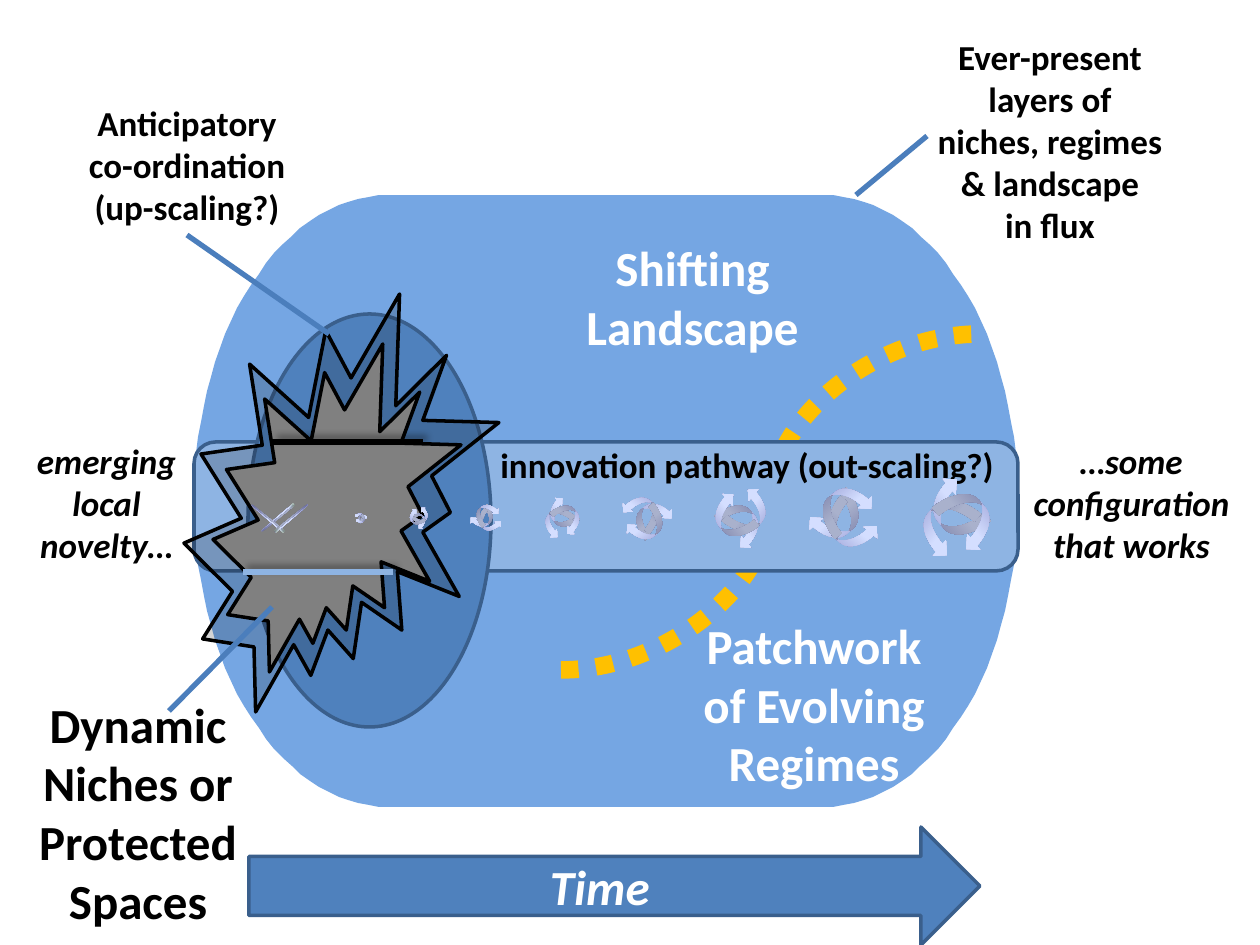
from dataclasses import dataclass
from math import cos, pi, radians, sin

from lxml import etree
from pptx import Presentation
from pptx import util as u
from pptx.dml.color import RGBColor
from pptx.enum import dml, shapes, text
from pptx.oxml import ns

PX = 914400 / 126
KIND = shapes.MSO_SHAPE
LINK = shapes.MSO_CONNECTOR


@dataclass(frozen=True)
class Theme:
    font: str = "Calibri"
    big: int = 28
    small: int = 20
    black: str = "000000"
    white: str = "FFFFFF"
    blue: str = "4F81BD"
    edge: str = "3A5F8C"
    lead: str = "4B7EBC"
    sky: str = "75A6E3"
    band: str = "8EB4E3"
    gray: str = "808080"
    gold: str = "FFC000"
    sheen: tuple = ((0, "8488C4"), (53, "D4DEFF"), (83, "D4DEFF"), (100, "96AB94"))


T = Theme()


def emu(*vals):
    return [u.Emu(round(v * PX)) for v in vals]


def rgb(code):
    return RGBColor.from_string(code)


def sub(node, tag, **attrs):
    return etree.SubElement(node, ns.qn("a:" + tag), attrs)


def paint(item, fill, line=None, width=2):
    item.shadow.inherit = False
    item.fill.solid()
    item.fill.fore_color.rgb = rgb(fill)
    if line:
        item.line.color.rgb = rgb(line)
        item.line.width = u.Pt(width)
    else:
        item.line.fill.background()


def shape(page, kind, box, fill, line):
    item = page.add_shape(kind, *emu(*box))
    paint(item, fill, line)
    return item


def write(item, words, size, color, slant=False):
    """Centre the words; a line break stays within the paragraph."""
    para = item.text_frame.paragraphs[0]
    para.text = words.replace("\n", "\v")
    para.alignment = text.PP_ALIGN.CENTER
    for run in para.runs:
        font = run.font
        font.name, font.size = T.font, u.Pt(size)
        font.bold, font.italic = True, slant
        font.color.rgb = rgb(color)


def label(page, box, words, size=T.small, color=T.black, slant=False):
    item = page.add_textbox(*emu(*box))
    item.text_frame.word_wrap = False
    item.text_frame.auto_size = text.MSO_AUTO_SIZE.SHAPE_TO_FIT_TEXT
    write(item, words, size, color, slant)
    return item


def link(page, start, end, color=T.lead, width=3, kind=LINK.STRAIGHT, shade=False):
    item = page.add_connector(kind, *emu(*start, *end))
    item.line.color.rgb = rgb(color)
    item.line.width = u.Pt(width)
    glow = sub(item._element.spPr, "effectLst")
    if shade:
        cast = sub(glow, "outerShdw", blurRad="50800", dist="38100", dir="18900000")
        sub(sub(cast, "srgbClr", val=T.black), "alpha", val="40000")
    return item


def barrel(page, box, cap):
    """Draw a block whose two ends are half ellipses of depth cap."""
    x, y, w, h = box
    steps = 60
    dots = []
    for side, mid in ((1, x + w - cap), (-1, x + cap)):
        for i in range(steps + 1):
            turn = pi * i / steps - pi / 2
            dots.append((mid + side * cap * cos(turn),
                         y + h / 2 + side * h / 2 * sin(turn)))
    path = page.build_freeform(*dots[0], scale=PX)
    path.add_line_segments(dots[1:], close=True)
    paint(path.convert_to_shape(), T.sky)


def regime(page, box):
    x, y, w, h = box
    barrel(page, box, 195)
    curve = link(page, (x + 367, y + 475), (x + 786, y + 139), T.gold, 10, LINK.CURVE)
    curve.line.dash_style = dml.MSO_LINE.ROUND_DOT
    shape(page, KIND.ROUNDED_RECTANGLE, (x, y + 247, w, 129), T.band, T.edge)
    label(page, (x + 496, y + 414, 248, 190), "Patchwork\nof Evolving\nRegimes",
          T.big, T.white)
    label(page, (x + 378, y + 36, 241, 131), "Shifting\nLandscape", T.big, T.white)
    label(page, (x + 273, y + 242, 560, 55), "innovation pathway (out-scaling?)")


def niche(page, box):
    x, y, w, h = box
    shape(page, KIND.OVAL, (x + 64, y + 20, 243, 413), T.blue, T.edge)
    burst = shape(page, KIND.EXPLOSION2, box, T.black, T.black)
    tint = burst.fill._xPr.find(ns.qn("a:solidFill"))[0]
    sub(tint, "alpha", val="17000")
    shape(page, KIND.EXPLOSION2, (x + 29, y + 50, 248, 328), T.gray, T.black)
    for left, top, color in ((89, 148, T.black), (59, 278, T.band)):
        link(page, (x + left, y + top), (x + left + 150, y + top), color, shade=True)


def shine(item):
    item.shadow.inherit = False
    item.line.fill.background()
    item.fill.gradient()
    item.fill.gradient_angle = 0
    stops = item.fill._xPr.find(ns.qn("a:gradFill")).find(ns.qn("a:gsLst"))
    for old in list(stops):
        stops.remove(old)
    for pos, color in T.sheen:
        sub(sub(stops, "gs", pos=str(pos * 1000)), "srgbClr", val=color)


def swirl(page, mid, wide, turn=0, squash=1):
    """Group three curved arrows chasing each other round mid."""
    group = page.add_group_shape().shapes
    high = 1.56 * wide * squash
    c, s = cos(radians(turn)), sin(radians(turn))
    arrows = ((-0.03, -0.21, "h", 140.3), (-0.27, 0.18, "hv", 219.7),
              (0.3, 0.03, "v", 140.3))
    for dx, dy, flips, spin in arrows:
        x = mid[0] + wide * (dx * c - dy * s)
        y = mid[1] + wide * (dx * s + dy * c) * squash
        item = group.add_shape(KIND.CURVED_RIGHT_ARROW,
                               *emu(x - wide / 2, y - high / 2, wide, high))
        item.rotation = (spin + turn) % 360
        for flip in flips:
            item._element.spPr.xfrm.set("flip" + flip.upper(), "1")
        shine(item)


def pathway(page, start, count):
    """Grow the swirls along the pathway, a quarter turn at each step."""
    x, y = start
    swirl(page, (x - 82, y), 42, squash=0.04)
    for i in range(count):
        spot = x + 58 * i + 9 * i * (i - 1) / 2
        swirl(page, (spot, y), 6 + 5 * i, 90 * (i + 1))


def notes(page):
    plan = label(page, (72, 95, 230, 140), "Anticipatory\nco-ordination\n(up-scaling?)")
    link(page, (187, 235), (329, 334)).begin_connect(plan, 2)
    label(page, (25, 688, 226, 251), "Dynamic\nNiches or\nProtected\nSpaces", T.big)
    link(page, (169, 711), (272, 607))
    label(page, (24, 433, 165, 140), "emerging\nlocal\nnovelty…", slant=True)
    label(page, (1020, 433, 223, 140), "…some\nconfiguration\nthat works", slant=True)
    label(page, (924, 29, 252, 224),
          "Ever-present\nlayers of\nniches, regimes\n& landscape\nin flux")
    link(page, (856, 195), (927, 136))


def clock(page, box):
    item = shape(page, KIND.RIGHT_ARROW, box, T.blue, T.edge)
    item.text_frame.vertical_anchor = text.MSO_ANCHOR.MIDDLE
    write(item, "Time", T.big, T.white, True)


def main():
    deck = Presentation()
    deck.slide_width, deck.slide_height = emu(1260, 945)
    page = deck.slides.add_slide(deck.slide_layouts[6]).shapes
    regime(page, (194, 195, 824, 612))
    niche(page, (184, 294, 315, 418))
    pathway(page, (361, 518), 8)
    notes(page)
    clock(page, (249, 827, 731, 118))
    deck.save("out.pptx")


if __name__ == "__main__":
    main()
